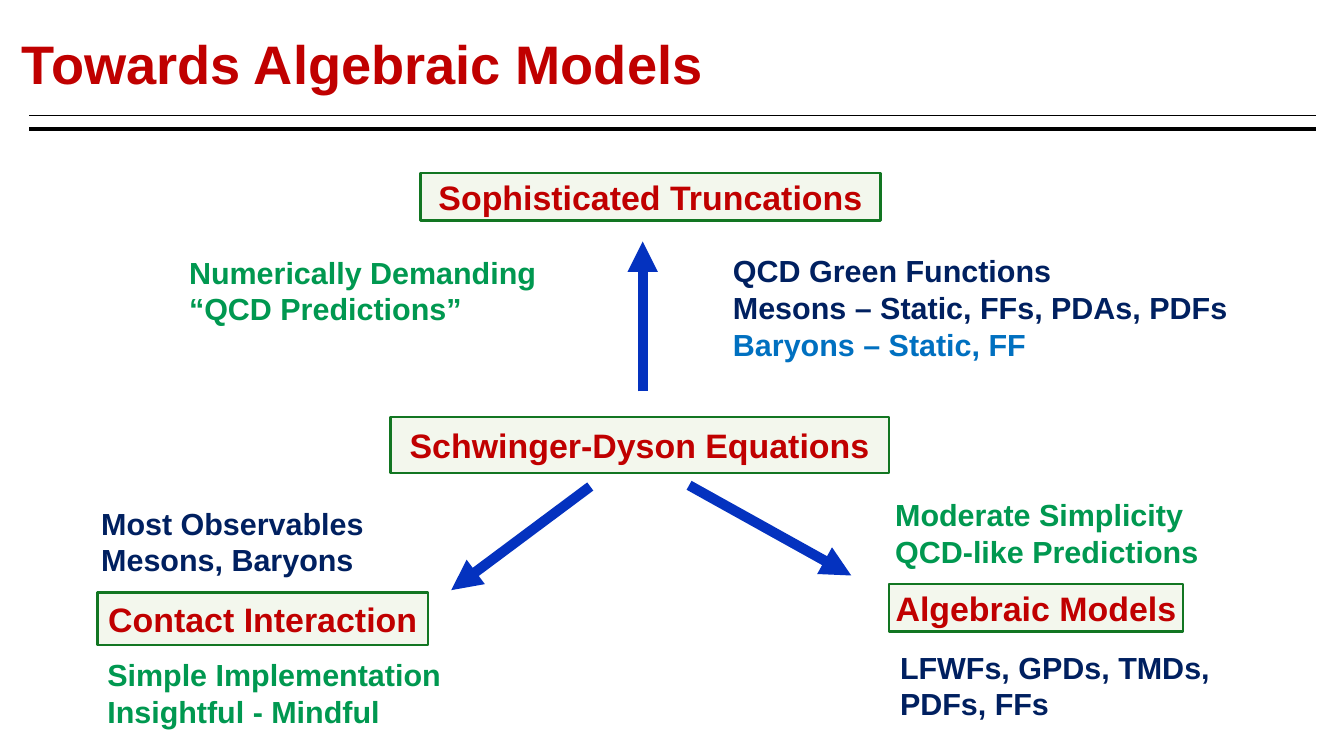
from lxml.etree import SubElement
from pptx import Presentation
from pptx.dml.color import RGBColor
from pptx.enum.shapes import MSO_CONNECTOR, MSO_SHAPE
from pptx.enum.text import MSO_ANCHOR, PP_ALIGN
from pptx.oxml.ns import qn
from pptx.util import Inches, Pt

COLORS = {
    "red": "C00000",
    "green": "009850",
    "navy": "002060",
    "sky": "0070C0",
    "arrow": "0432BF",
    "black": "000000",
    "box": "DDE8CB",
    "border": "127622",
}


class DiagramSlide:
    font = "Arial"
    title_size = 32
    topic_size = 20
    note_size = 18

    def __init__(self, deck):
        self.page = deck.slides.add_slide(deck.slide_layouts[6])

    def color(self, name):
        return RGBColor.from_string(COLORS[name])

    def set_text(self, shape, lines, size, align, anchor):
        frame = shape.text_frame
        frame.word_wrap = True
        frame.vertical_anchor = anchor
        frame.margin_left = frame.margin_right = 0
        frame.margin_top = frame.margin_bottom = 0
        frame.text = "\n".join(text for text, name in lines)
        for paragraph, (text, name) in zip(frame.paragraphs, lines):
            paragraph.alignment = align
            for span in paragraph.runs:
                span.font.name = self.font
                span.font.size = Pt(size)
                span.font.bold = True
                span.font.color.rgb = self.color(name)

    def title(self, text, place):
        box = self.page.shapes.add_textbox(*map(Inches, place))
        self.set_text(box, [(text, "red")], self.title_size, PP_ALIGN.LEFT, MSO_ANCHOR.MIDDLE)

    def note(self, lines, place):
        box = self.page.shapes.add_textbox(*map(Inches, place))
        self.set_text(box, lines, self.note_size, PP_ALIGN.JUSTIFY, MSO_ANCHOR.TOP)

    def topic(self, text, place):
        box = self.page.shapes.add_shape(MSO_SHAPE.RECTANGLE, *map(Inches, place))
        box.shadow.inherit = False
        box.fill.solid()
        box.fill.fore_color.rgb = self.color("box")
        fill_color = box._element.spPr.find(qn("a:solidFill")).find(qn("a:srgbClr"))
        SubElement(fill_color, qn("a:alpha"), val="33000")
        box.line.color.rgb = self.color("border")
        box.line.width = Pt(1.5)
        self.set_text(box, [(text, "red")], self.topic_size, PP_ALIGN.CENTER, MSO_ANCHOR.MIDDLE)

    def line(self, start, end, name, width):
        line = self.page.shapes.add_connector(
            MSO_CONNECTOR.STRAIGHT, *map(Inches, (*start, *end))
        )
        line.line.color.rgb = self.color(name)
        line.line.width = Pt(width)
        SubElement(line._element.spPr, qn("a:effectLst"))
        return line

    def arrow(self, start, end):
        arrow = self.line(start, end, "arrow", 6)
        outline = arrow._element.spPr.find(qn("a:ln"))
        SubElement(outline, qn("a:tailEnd"), type="triangle")


def main():
    deck = Presentation()
    deck.slide_width = Inches(11.02)
    deck.slide_height = Inches(6.2)
    slide = DiagramSlide(deck)

    slide.title("Towards Algebraic Models", (0.18, 0, 9.34, 1.03))
    for top, width in ((0.95, 0.75), (1.06, 2.3)):
        slide.line((0.24, top), (10.79, top), "black", width)

    topics = [
        ("Sophisticated Truncations", (3.45, 1.42, 3.77, 0.39)),
        ("Schwinger-Dyson Equations", (3.2, 3.42, 4.09, 0.46)),
        ("Contact Interaction", (0.8, 4.86, 2.71, 0.43)),
        ("Algebraic Models", (7.29, 4.79, 2.41, 0.39)),
    ]
    for text, place in topics:
        slide.topic(text, place)

    arrows = [
        ((5.27, 3.21), (5.27, 1.98)),
        ((4.84, 3.99), (3.7, 4.84)),
        ((5.65, 3.98), (6.98, 4.72)),
    ]
    for start, end in arrows:
        slide.arrow(start, end)

    notes = [
        ((1.55, 2.08, 3.25, 0.65),
         [("Numerically Demanding", "green"), ("“QCD Predictions”", "green")]),
        ((6.01, 2.07, 4.52, 0.97),
         [("QCD Green Functions", "navy"),
          ("Mesons – Static, FFs, PDAs, PDFs", "navy"),
          ("Baryons – Static, FF", "sky")]),
        ((0.83, 4.14, 2.35, 0.65),
         [("Most Observables", "navy"), ("Mesons, Baryons", "navy")]),
        ((0.88, 5.38, 3.01, 0.65),
         [("Simple Implementation", "green"), ("Insightful - Mindful", "green")]),
        ((7.34, 4.07, 3.01, 0.65),
         [("Moderate Simplicity", "green"), ("QCD-like Predictions", "green")]),
        ((7.38, 5.32, 3.26, 0.65),
         [("LFWFs, GPDs, TMDs,", "navy"), ("PDFs, FFs", "navy")]),
    ]
    for place, lines in notes:
        slide.note(lines, place)

    deck.save("out.pptx")


if __name__ == "__main__":
    main()
